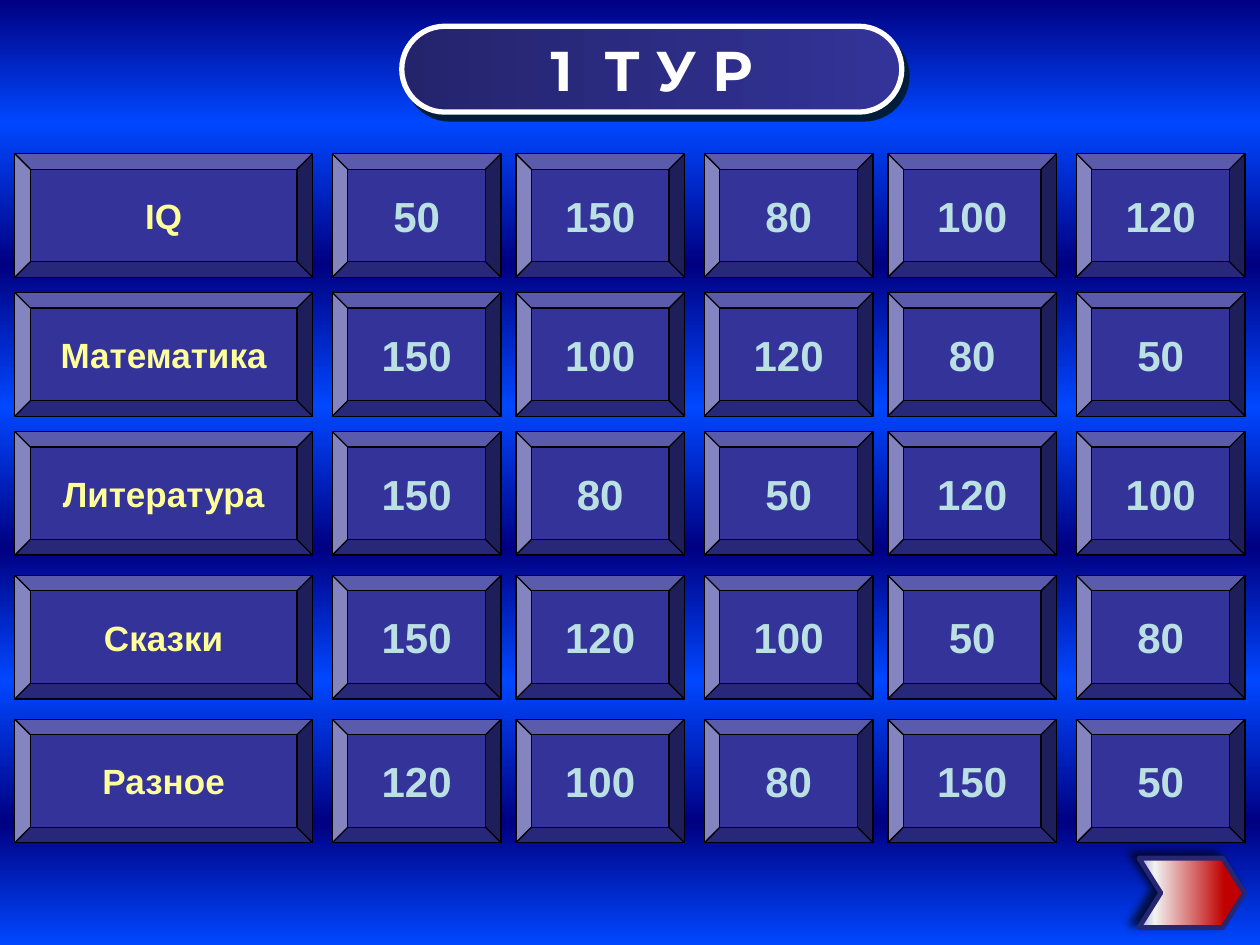
from lxml import etree
from pptx import Presentation
from pptx import util as u
from pptx.dml.color import RGBColor
from pptx.enum import shapes, text
from pptx.oxml import ns


def color(hex_code):
    return RGBColor.from_string(hex_code)


def sub(parent, tag, **attributes):
    return etree.SubElement(parent, ns.qn(tag), attributes)


def write(shape, *pieces, size, fill, font="Arial"):
    """Write centred bold runs; each piece is (wording, extra spacing in points)."""
    frame = shape.text_frame
    frame.word_wrap = False
    frame.vertical_anchor = text.MSO_ANCHOR.MIDDLE
    paragraph = frame.paragraphs[0]
    paragraph.alignment = text.PP_ALIGN.CENTER
    for wording, spacing in pieces:
        run = paragraph.add_run()
        run.text = wording
        run.font.size = u.Pt(size)
        run.font.bold = True
        run.font.name = font
        run.font.color.rgb = color(fill)
        if spacing:
            run.font._element.set("spc", str(spacing * 100))


class Board:
    panel, edge = "333399", "000000"
    topic_color, score_color = "FFFF99", "BBE0E3"

    def __init__(self, slide):
        self.slide = slide

    def gradient(self, fill, element, stops, angle):
        fill.gradient()
        fill.gradient_angle = (360 - angle) % 360
        stop_list = element.find(".//" + ns.qn("a:gsLst"))
        for old_stop in list(stop_list):
            stop_list.remove(old_stop)
        for position, hex_code in stops:
            stop = sub(stop_list, "a:gs", pos=str(position * 1000))
            sub(stop, "a:srgbClr", val=hex_code)

    def background(self, stops):
        self.gradient(self.slide.background.fill, self.slide.element, stops, 90)

    def shape(self, kind, left, top, width, height, adjust, line, weight):
        shape = self.slide.shapes.add_shape(
            kind, u.Cm(left), u.Cm(top), u.Cm(width), u.Cm(height))
        shape.adjustments[0] = adjust
        shape.line.color.rgb = color(line)
        shape.line.width = u.Pt(weight)
        shape.shadow.inherit = False
        return shape

    def shadow(self, shape, hex_code, opacity, blur, distance, angle):
        effects = shape.element.spPr.find(ns.qn("a:effectLst"))
        outer = sub(effects, "a:outerShdw", blurRad=str(u.Pt(blur)),
                    dist=str(u.Pt(distance)), dir=str(angle * 60000),
                    algn="ctr", rotWithShape="0")
        tint = sub(outer, "a:srgbClr", val=hex_code)
        sub(tint, "a:alpha", val=str(opacity * 1000))

    def tile(self, wording, left, top, width, size, fill):
        tile = self.shape(shapes.MSO_SHAPE.BEVEL, left, top, width, 2.49,
                          0.125, self.edge, 0.75)
        tile.fill.solid()
        tile.fill.fore_color.rgb = color(self.panel)
        write(tile, (wording, 0), size=size, fill=fill)

    def row(self, topic, scores, top, score_lefts):
        self.tile(topic, 0.3, top, 6, 20, self.topic_color)
        for score, left in zip(scores, score_lefts):
            self.tile(str(score), left, top, 3.4, 24, self.score_color)

    def next_arrow(self):
        arrow = self.shape(shapes.MSO_SHAPE.CHEVRON, 22.96, 17.3, 2.13, 1.4,
                           0.315, "262673", 2.75)
        self.gradient(arrow.fill, arrow.element,
                      [(19, "C00000"), (85, "F2F2F2"), (100, "A3A3E0")], 180)
        self.shadow(arrow, "000000", 70, 5, 5, 210)

    def title(self, *pieces):
        title = self.shape(shapes.MSO_SHAPE.ROUNDED_RECTANGLE, 8.1, 0.53, 10.08, 1.73,
                           0.5, "FFFFFF", 3)
        self.gradient(title.fill, title.element, [(0, "24246D"), (100, self.panel)], 0)
        self.shadow(title, "001D3A", 100, 0, 5, 53)
        write(title, *pieces, size=32, fill="FFFFFF", font="Montserrat")


def main():
    deck = Presentation()
    deck.slide_width, deck.slide_height = u.Cm(25.4), u.Cm(19.05)
    board = Board(deck.slides.add_slide(deck.slide_layouts[6]))

    # Striped background
    positions = [0, 13, 28, 43, 58, 72, 87, 100]
    board.background([(position, ("000082", "0047FF")[i % 2])
                      for i, position in enumerate(positions)])

    # Topics and their scores
    score_lefts = [6.7, 10.4, 14.2, 17.9, 21.7]
    rounds = [
        ("IQ", 3.1, [50, 150, 80, 100, 120]),
        ("Математика", 5.9, [150, 100, 120, 80, 50]),
        ("Литература", 8.7, [150, 80, 50, 120, 100]),
        ("Сказки", 11.6, [150, 120, 100, 50, 80]),
        ("Разное", 14.5, [120, 100, 80, 150, 50]),
    ]
    for topic, top, scores in rounds:
        board.row(topic, scores, top, score_lefts)

    # Arrow to the next round and the round title
    board.next_arrow()
    board.title(("1", 0), (" ", 9), ("Т У Р", 0))

    deck.save("out.pptx")


if __name__ == "__main__":
    main()
